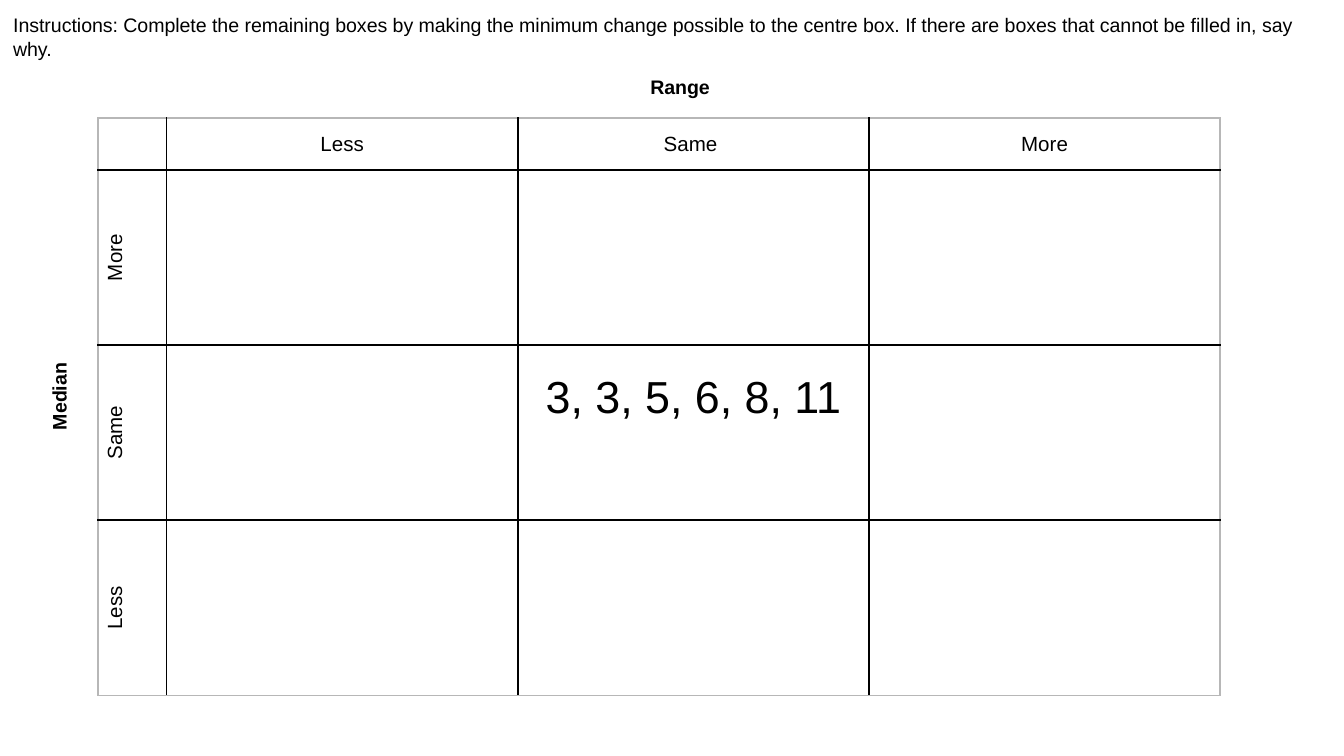
from dataclasses import dataclass

from lxml import etree
from pptx import Presentation
from pptx.dml.color import RGBColor
from pptx.enum.text import MSO_ANCHOR as Anchor, PP_ALIGN as Align
from pptx.oxml.ns import qn
from pptx.util import Inches, Pt


@dataclass(frozen=True)
class Theme:
    font: str = "Arial"
    ink: str = "000000"
    frame: str = "B7B7B7"
    label: float = 10.5
    cell: float = 11
    numbers: float = 24
    line: float = 1


THEME = Theme()
RANGE_LABELS = ["Less", "Same ", "More"]
MEDIAN_LABELS = ["More", "Same", "Less"]


def add_run(p, text, size, bold=False):
    r = p.add_run()
    r.text = text
    r.font.name = THEME.font
    r.font.size = Pt(size)
    r.font.bold = bold
    r.font.color.rgb = RGBColor.from_string(THEME.ink)


def add_label(s, box, text, bold=False, align=Align.LEFT, wrap=True, rotation=0):
    tb = s.shapes.add_textbox(*map(Inches, box))
    tb.rotation = rotation
    tf = tb.text_frame
    tf.word_wrap = wrap
    p = tf.paragraphs[0]
    p.alignment = align
    add_run(p, text, THEME.label, bold)


def set_borders(cell, colors):
    """Draw the left, right, top and bottom lines of a cell."""
    tc_pr = cell._tc.get_or_add_tcPr()
    for i, (side, color) in enumerate(zip("LRTB", colors)):
        ln = etree.Element(qn(f"a:ln{side}"), w=str(Pt(THEME.line)))
        fill = etree.SubElement(ln, qn("a:solidFill"))
        etree.SubElement(fill, qn("a:srgbClr"), val=color)
        tc_pr.insert(i, ln)


def fill_cell(cell, text, size=THEME.cell, anchor=Anchor.MIDDLE):
    cell.vertical_anchor = anchor
    p = cell.text_frame.paragraphs[0]
    p.alignment = Align.CENTER
    add_run(p, text, size)


def add_grid(s, box, head_width, head_height):
    left, top, width, height = box
    n = len(RANGE_LABELS) + 1
    table = s.shapes.add_table(n, n, *map(Inches, box)).table
    table.first_row = table.horz_banding = False

    # Narrow headings, equal boxes
    for i in range(n):
        table.columns[i].width = Inches(
            (width - head_width) / (n - 1) if i else head_width)
        table.rows[i].height = Inches(
            (height - head_height) / (n - 1) if i else head_height)

    # Grey outer frame, black inner lines
    for row in range(n):
        for col in range(n):
            cell = table.cell(row, col)
            cell.fill.background()
            cell.margin_left = cell.margin_right = Inches(0.07)
            cell.margin_top = cell.margin_bottom = Inches(0.04)
            outer = (col == 0, col == n - 1, row == 0, row == n - 1)
            set_borders(cell, [THEME.frame if o else THEME.ink for o in outer])

    # Headings
    for i, (across, down) in enumerate(zip(RANGE_LABELS, MEDIAN_LABELS), 1):
        fill_cell(table.cell(0, i), across)
        side = table.cell(i, 0)
        fill_cell(side, down)
        side._tc.get_or_add_tcPr().set("vert", "vert270")

    # Centre box
    centre = table.cell(2, 2)
    fill_cell(centre, "3, 3, 5, 6, 8, 11", THEME.numbers, Anchor.TOP)
    centre.margin_top = Inches(0.21)


def main():
    prs = Presentation()
    prs.slide_width = Inches(10)
    prs.slide_height = prs.slide_width * 9 // 16
    s = prs.slides.add_slide(prs.slide_layouts[6])

    add_grid(s, (0.73, 0.88, 8.35, 4.29), 0.51, 0.38)

    # Axis titles
    add_label(s, (-1.62, 2.81, 4.12, 0.28), "Median", bold=True,
              align=Align.CENTER, rotation=270)
    add_label(s, (4.74, 0.51, 0.65, 0.28), "Range", bold=True, wrap=False)

    # Instructions
    add_label(s, (0, 0.05, 9.93, 0.45),
              "Instructions: Complete the remaining boxes by making the minimum "
              "change possible to the centre box. If there are boxes that cannot "
              "be filled in, say why.")

    prs.save("out.pptx")


if __name__ == "__main__":
    main()
